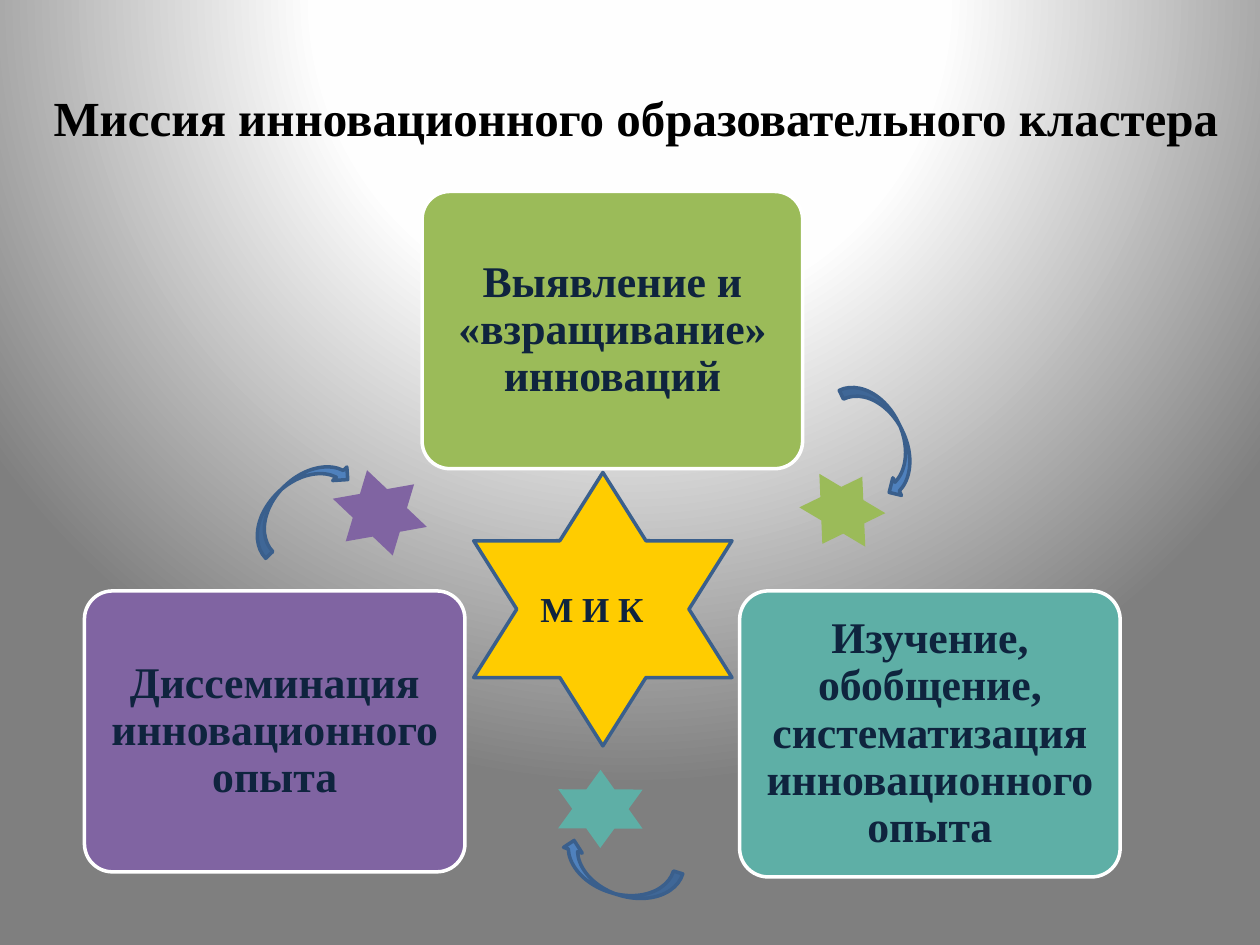
from dataclasses import dataclass

from lxml import etree
from pptx import Presentation
from pptx.dml.color import RGBColor
from pptx.enum.shapes import MSO_SHAPE
from pptx.enum.text import MSO_ANCHOR, PP_ALIGN
from pptx.oxml.ns import qn
from pptx.util import Inches, Pt

CARD = MSO_SHAPE.ROUNDED_RECTANGLE
STAR = MSO_SHAPE.STAR_6_POINT
ARROW = MSO_SHAPE.CURVED_LEFT_ARROW
MIDDLE = MSO_ANCHOR.MIDDLE
CENTER = PP_ALIGN.CENTER
LEFT = PP_ALIGN.LEFT


@dataclass(frozen=True)
class Theme:
    font: str = "Times New Roman"
    title_size: int = 28
    card_size: int = 25
    core_size: int = 20
    title: str = "000000"
    text: str = "0F243E"
    green: str = "9BBB59"
    teal: str = "5EAFA6"
    purple: str = "8064A2"
    gold: str = "FFCC00"
    blue: str = "4F81BD"
    outline: str = "3A5F8C"
    white: str = "FFFFFF"
    glow: tuple = ((0, "FFFFFF"), (40, "FEFEFE"), (100, "7F7F7F"))


THEME = Theme()

prs = Presentation()
prs.slide_width, prs.slide_height = Inches(10), Inches(7.5)
slide = prs.slides.add_slide(prs.slide_layouts[6])


def add_figure(kind, box, fill, line=None, rotation=0):
    figure = slide.shapes.add_shape(kind, *map(Inches, box))
    figure.rotation = rotation
    figure.shadow.inherit = False
    figure.fill.solid()
    figure.fill.fore_color.rgb = RGBColor.from_string(fill)
    if line:
        figure.line.color.rgb = RGBColor.from_string(line)
        figure.line.width = Pt(2)
    else:
        figure.line.fill.background()
    return figure


def write(shape, text, size, color, align=CENTER):
    """Fill a shape with one bold, wrapped paragraph."""
    frame = shape.text_frame
    frame.word_wrap = True
    frame.vertical_anchor = MIDDLE
    paragraph = frame.paragraphs[0]
    paragraph.text = text
    paragraph.alignment = align
    paragraph.font.name = THEME.font
    paragraph.font.size = Pt(size)
    paragraph.font.bold = True
    paragraph.font.color.rgb = RGBColor.from_string(color)
    return frame


# Background: circular glow centred above the slide
slide.background.fill.gradient()
gradient = slide.element.find(".//" + qn("a:gradFill"))
for child in list(gradient):
    gradient.remove(child)
stops = etree.SubElement(gradient, qn("a:gsLst"))
for percent, color in THEME.glow:
    stop = etree.SubElement(stops, qn("a:gs"), pos=str(percent * 1000))
    etree.SubElement(stop, qn("a:srgbClr"), val=color)
circle = etree.SubElement(gradient, qn("a:path"), path="circle")
etree.SubElement(circle, qn("a:fillToRect"), l="50000", t="-80000", r="50000", b="180000")

title = slide.shapes.add_textbox(Inches(0.2), Inches(0.3), Inches(9.69), Inches(1.25))
write(title, "Миссия инновационного образовательного кластера", THEME.title_size, THEME.title)

# Mission cards, each with the small star that follows it: box, rotation
missions = [
    ("Выявление и «взращивание» инноваций", THEME.green,
     (3.35, 1.52, 3.02, 2.2), (6.38, 3.74, 0.61, 0.62), 30.8),
    ("Изучение, обобщение, систематизация инновационного опыта", THEME.teal,
     (5.87, 4.69, 3.02, 2.27), (4.43, 6.11, 0.67, 0.62), 180.2),
    ("Диссеминация инновационного опыта", THEME.purple,
     (0.67, 4.69, 3.02, 2.23), (2.72, 3.68, 0.59, 0.78), 106.7),
]
for text, color, card_box, star_box, star_rotation in missions:
    card = add_figure(CARD, card_box, color, THEME.white)
    card.adjustments[0] = 0.1
    frame = write(card, text, THEME.card_size, THEME.text)
    frame.paragraphs[0].line_spacing = 0.9
    frame.margin_left = frame.margin_right = Inches(0.1)
    frame.margin_top = frame.margin_bottom = Inches(0.1)
    add_figure(STAR, star_box, color, rotation=star_rotation)

add_figure(STAR, (3.76, 3.75, 2.05, 2.17), THEME.gold, THEME.outline)

for left, top, rotation in [(6.86, 2.98, 333.9), (4.75, 6.45, 107.1), (2.2, 3.49, 226.2)]:
    add_figure(ARROW, (left, top, 0.31, 0.98), THEME.blue, THEME.outline, rotation)

core = slide.shapes.add_textbox(Inches(4.19), Inches(4.61), Inches(1.25), Inches(0.44))
write(core, "М И К", THEME.core_size, THEME.text, LEFT)

prs.save("out.pptx")
